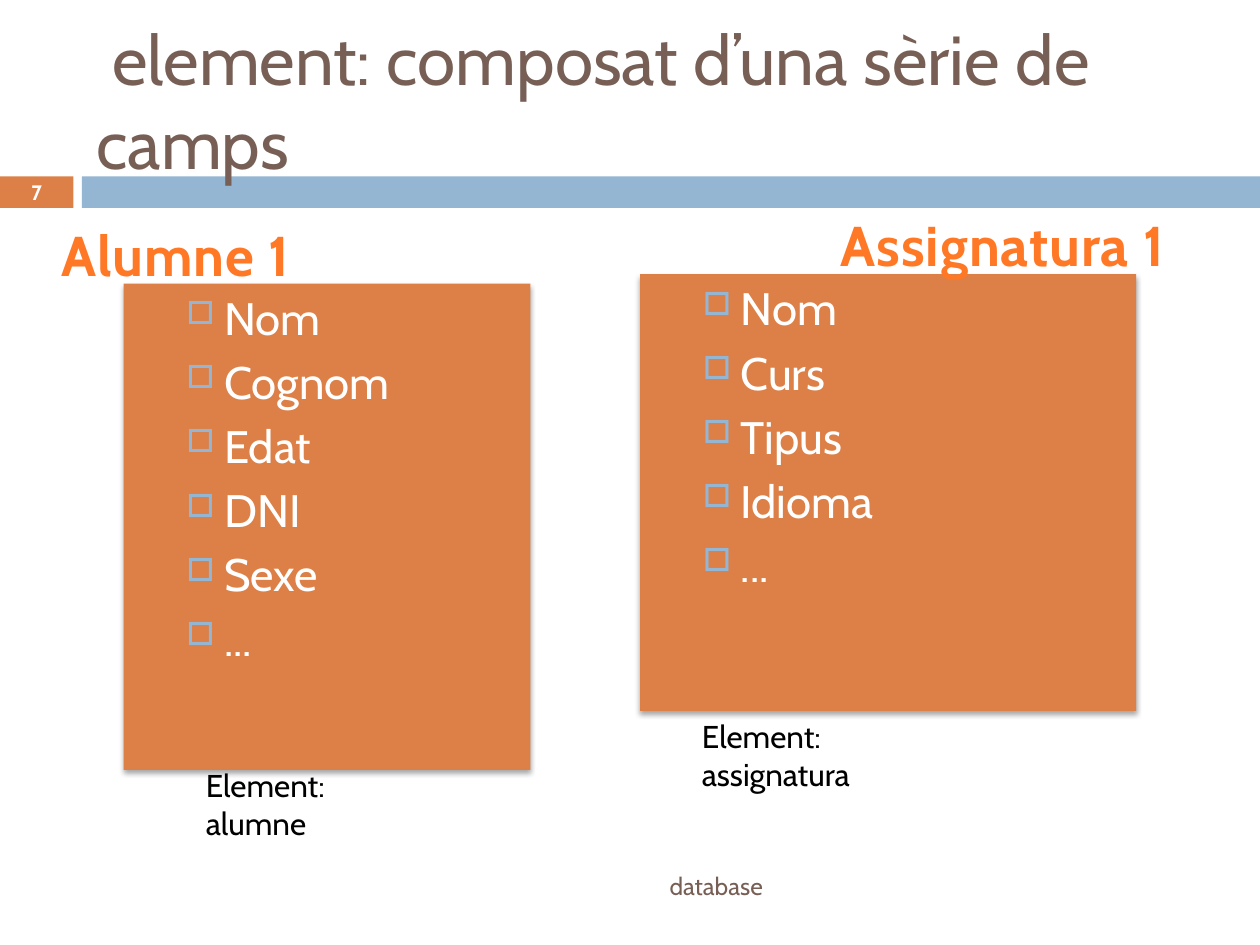
from pptx import Presentation
from pptx.util import Pt
from pptx.dml.color import RGBColor
from pptx.enum.shapes import MSO_SHAPE as Shape
from pptx.enum.text import PP_ALIGN as Align, MSO_ANCHOR as Anchor
from pptx.oxml import parse_xml
from pptx.oxml.ns import nsdecls

ORANGE = RGBColor(0xDD, 0x80, 0x47)
BLUE = RGBColor(0x94, 0xB6, 0xD2)
BROWN = RGBColor(0x77, 0x5F, 0x55)
WHITE = RGBColor(0xFF, 0xFF, 0xFF)
BLACK = RGBColor(0, 0, 0)
BRIGHT = RGBColor(0xFF, 0x78, 0x25)
DARK = RGBColor(0xBF, 0x52, 0x10)
NS = nsdecls("a")

deck = Presentation()
deck.slide_width, deck.slide_height = Pt(720), Pt(540)
slide = deck.slides.add_slide(deck.slide_layouts[6])


def rect(spot, fill):
    box = slide.shapes.add_shape(Shape.RECTANGLE, *map(Pt, spot))
    box.shadow.inherit = False
    box.fill.solid()
    box.fill.fore_color.rgb = fill
    box.line.fill.background()
    return box


def label(spot, text, size, color, align=Align.LEFT, anchor=Anchor.TOP, wrap=True):
    frame = slide.shapes.add_textbox(*map(Pt, spot)).text_frame
    frame.word_wrap = wrap
    frame.vertical_anchor = anchor
    para = frame.paragraphs[0]
    para.alignment = align
    run = para.add_run()
    run.text = text
    run.font.name = "Cabin"
    run.font.size = Pt(size)
    run.font.color.rgb = color
    return frame, run


rect((0, 100.8, 42, 18), ORANGE)
rect((46.8, 100.8, 673.2, 18), BLUE)

title, run = label((48, 18, 672, 78), "element: composat d’una sèrie de camps",
                   39.6, BROWN, anchor=Anchor.MIDDLE)
title.paragraphs[0]._p.get_or_add_pPr().set("indent", str(Pt(9)))

foot, run = label((48, 492, 427, 28.8), "database", 14, BROWN, Align.RIGHT, Anchor.MIDDLE)
foot.margin_right = Pt(39)

page, run = label((0, 100.2, 42, 19.2), "7", 11.9, WHITE, Align.CENTER, Anchor.MIDDLE)
run.font.bold = True

cards = [
    ((70.7, 162, 232.5, 278), ["Nom", "Cognom", "Edat", "DNI", "Sexe", "..."]),
    ((365.8, 156.7, 283.5, 249.5), ["Nom", "Curs", "Tipus", "Idioma", "..."]),
]
for spot, fields in cards:
    card = rect(spot, ORANGE)
    props = card._element.spPr
    props.remove(props.find("{*}effectLst"))
    props.append(parse_xml(
        f'<a:effectLst {NS}><a:outerShdw blurRad="{Pt(3)}" dist="{Pt(2)}" dir="5400000" '
        'rotWithShape="0"><a:srgbClr val="000000"><a:alpha val="35000"/></a:srgbClr>'
        '</a:outerShdw></a:effectLst>'))
    frame = card.text_frame
    frame.word_wrap = True
    frame.vertical_anchor = Anchor.TOP
    for i, field in enumerate(fields):
        para = frame.add_paragraph() if i else frame.paragraphs[0]
        para.level = 1
        para.alignment = Align.LEFT
        para.space_before = Pt(5.5)
        ppr = para._p.get_or_add_pPr()
        ppr.set("marL", str(Pt(50.4)))
        ppr.set("indent", str(Pt(-21.6)))
        for xml in (f'<a:buClr {NS}><a:srgbClr val="{BLUE}"/></a:buClr>',
                    f'<a:buSzPct {NS} val="70000"/>',
                    f'<a:buChar {NS} char="□"/>'):
            ppr.append(parse_xml(xml))
        run = para.add_run()
        run.text = field
        run.font.name = "Cabin"
        run.font.size = Pt(26)
        run.font.color.rgb = WHITE

label((110.5, 434.2, 131, 28.8), "Element: alumne", 18, BLACK)
label((394, 406.2, 161, 28.8), "Element: assignatura", 18, BLACK)

heads = [((25.2, 122.4, 150.5, 46), "Alumne 1"), ((468, 116.6, 210, 46), "Assignatura 1")]
for spot, text in heads:
    frame, run = label(spot, text, 32, BRIGHT, Align.CENTER, wrap=False)
    run.font.bold = True
    run._r.get_or_add_rPr().set("spc", "50")
    fill = run.font.fill
    fill.gradient()
    fill.gradient_angle = 270
    for stop, place, color in zip(fill.gradient_stops, (0.25, 1), (BRIGHT, DARK)):
        stop.position = place
        stop.color.rgb = color

deck.save("out.pptx")
